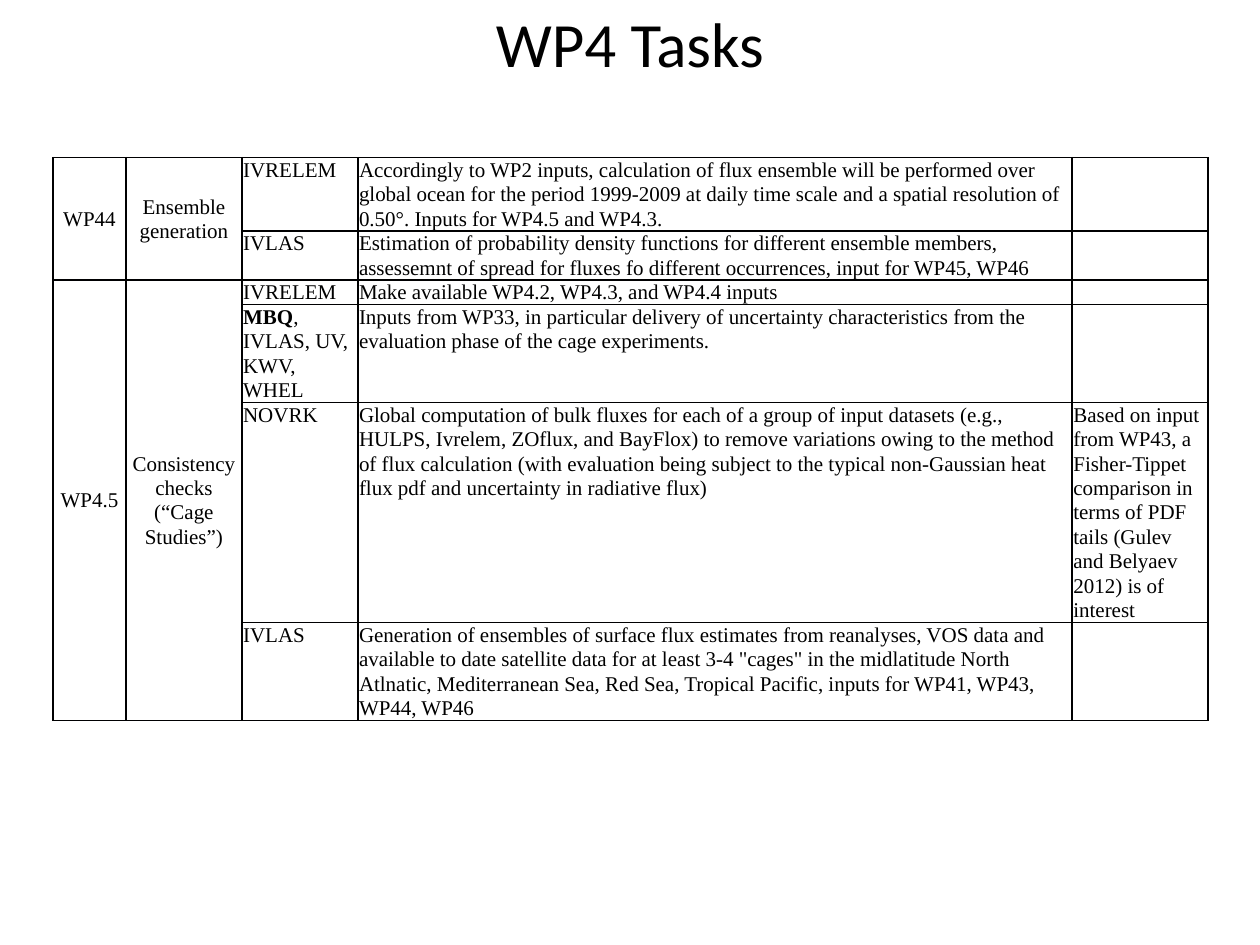
from lxml.etree import SubElement
from pptx import Presentation
from pptx.dml.color import RGBColor
from pptx.enum.text import MSO_ANCHOR as Anchor, PP_ALIGN as Align
from pptx.oxml.ns import qn
from pptx.util import Inches, Pt

COLORS = {"text": "000000", "border": "000001"}
TITLE = "WP4 Tasks"
GROUPS = [
    ("WP44", "Ensemble generation", [
        ("", "IVRELEM", "Accordingly to WP2 inputs, calculation of flux ensemble will be performed over global ocean for the period 1999-2009 at daily time scale and a spatial resolution of 0.50°. Inputs for WP4.5 and WP4.3.", ""),
        ("", "IVLAS", "Estimation of probability density functions for different ensemble members, assessemnt of spread for fluxes fo different occurrences, input for WP45, WP46", ""),
    ]),
    ("WP4.5", "Consistency checks (“Cage Studies”)", [
        ("", "IVRELEM", "Make available WP4.2, WP4.3, and WP4.4 inputs", ""),
        ("MBQ", ", IVLAS, UV, KWV, WHEL", "Inputs from WP33, in particular delivery of uncertainty characteristics from the evaluation phase of the cage experiments.", ""),
        ("", "NOVRK", "Global computation of bulk fluxes for each of a group of input datasets (e.g., HULPS, Ivrelem, ZOflux, and BayFlox) to remove variations owing to the method of flux calculation (with evaluation being subject to the typical non-Gaussian heat flux pdf and uncertainty in radiative flux)",
         "Based on input from WP43, a Fisher-Tippet comparison in terms of PDF tails (Gulev and Belyaev 2012) is of interest"),
        ("", "IVLAS", "Generation of ensembles of surface flux estimates from reanalyses, VOS data and available to date satellite data for at least 3-4 \"cages\" in the midlatitude North Atlnatic, Mediterranean Sea, Red Sea, Tropical Pacific, inputs for WP41, WP43, WP44, WP46", ""),
    ]),
]
COLUMN_WIDTHS = [0.58, 0.92, 0.92, 5.67, 1.08]
ROW_LINES = [3, 2, 1, 4, 9, 4]
LINE_HEIGHT = 0.19


def write(frame, text, lead="", font="Times New Roman", size=12, align=Align.LEFT, spacing=None):
    para = frame.paragraphs[0]
    para.alignment = align
    para.line_spacing = spacing
    for part, bold in ((lead, True), (text, False)):
        if part:
            span = para.add_run()
            span.text = part
            span.font.name = font
            span.font.size = Pt(size)
            span.font.bold = bold
            span.font.color.rgb = RGBColor.from_string(COLORS["text"])
    if not (lead or text):
        end = SubElement(para._p, qn("a:endParaRPr"), sz=str(size * 100))
        SubElement(end, qn("a:latin"), typeface=font)


def draw_borders(cell):
    properties = cell._tc.get_or_add_tcPr()
    for side in ("a:lnL", "a:lnR", "a:lnT", "a:lnB"):
        line = SubElement(properties, qn(side), w=str(Pt(1)))
        fill = SubElement(line, qn("a:solidFill"))
        SubElement(fill, qn("a:srgbClr"), val=COLORS["border"])


def fill_cell(cell, text, lead="", centered=False):
    cell.margin_left = cell.margin_right = Inches(0.01)
    cell.margin_top = cell.margin_bottom = 0
    cell.vertical_anchor = Anchor.MIDDLE if centered else Anchor.TOP
    draw_borders(cell)
    cell.fill.background()
    write(cell.text_frame, text, lead=lead, spacing=1.05,
          align=Align.CENTER if centered else Align.LEFT)


def add_task_table(page):
    frame = page.shapes.add_table(
        len(ROW_LINES), len(COLUMN_WIDTHS), Inches(0.42), Inches(1.25),
        Inches(sum(COLUMN_WIDTHS)), Inches(sum(ROW_LINES) * LINE_HEIGHT))
    table = frame.table
    table.first_row = table.horz_banding = False
    for column, width in zip(table.columns, COLUMN_WIDTHS):
        column.width = Inches(width)
    for row, lines in zip(table.rows, ROW_LINES):
        row.height = Inches(lines * LINE_HEIGHT)

    top = 0
    for code, name, tasks in GROUPS:
        for offset, (lead, partner, work, note) in enumerate(tasks):
            row = top + offset
            for column, label in enumerate((code, name)):
                fill_cell(table.cell(row, column), "" if offset else label, centered=True)
            fill_cell(table.cell(row, 2), partner, lead=lead)
            fill_cell(table.cell(row, 3), work)
            fill_cell(table.cell(row, 4), note)
        bottom = top + len(tasks) - 1
        for column in range(2):
            table.cell(top, column).merge(table.cell(bottom, column))
        top = bottom + 1


def main():
    deck = Presentation()
    deck.slide_width, deck.slide_height = Inches(10), Inches(7.5)
    page = deck.slides.add_slide(deck.slide_layouts[6])
    add_task_table(page)
    box = page.shapes.add_textbox(0, 0, deck.slide_width, Inches(0.67))
    box.text_frame.word_wrap = True
    box.text_frame.vertical_anchor = Anchor.MIDDLE
    write(box.text_frame, TITLE, font="Calibri", size=36, align=Align.CENTER)
    deck.save("out.pptx")


if __name__ == "__main__":
    main()
